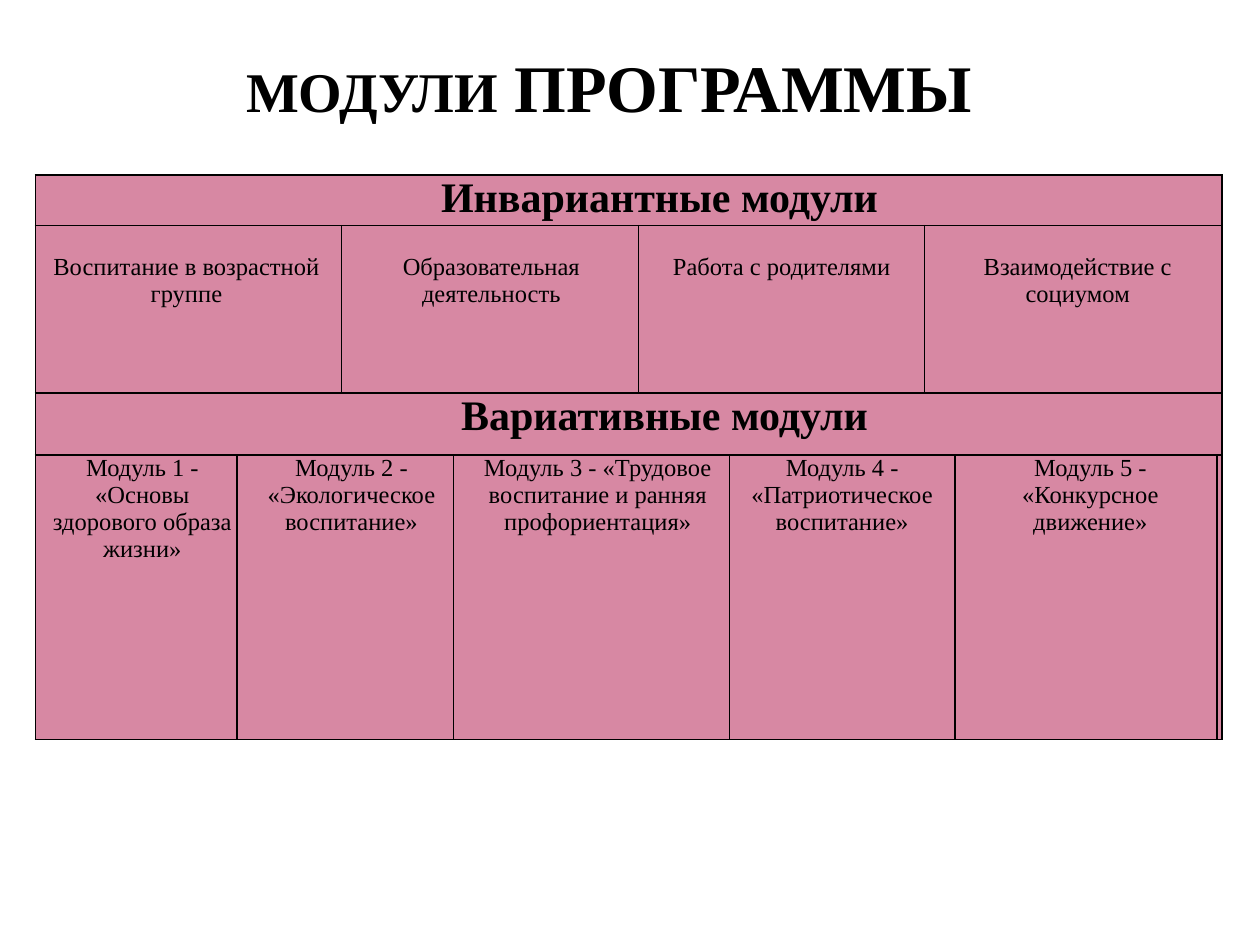
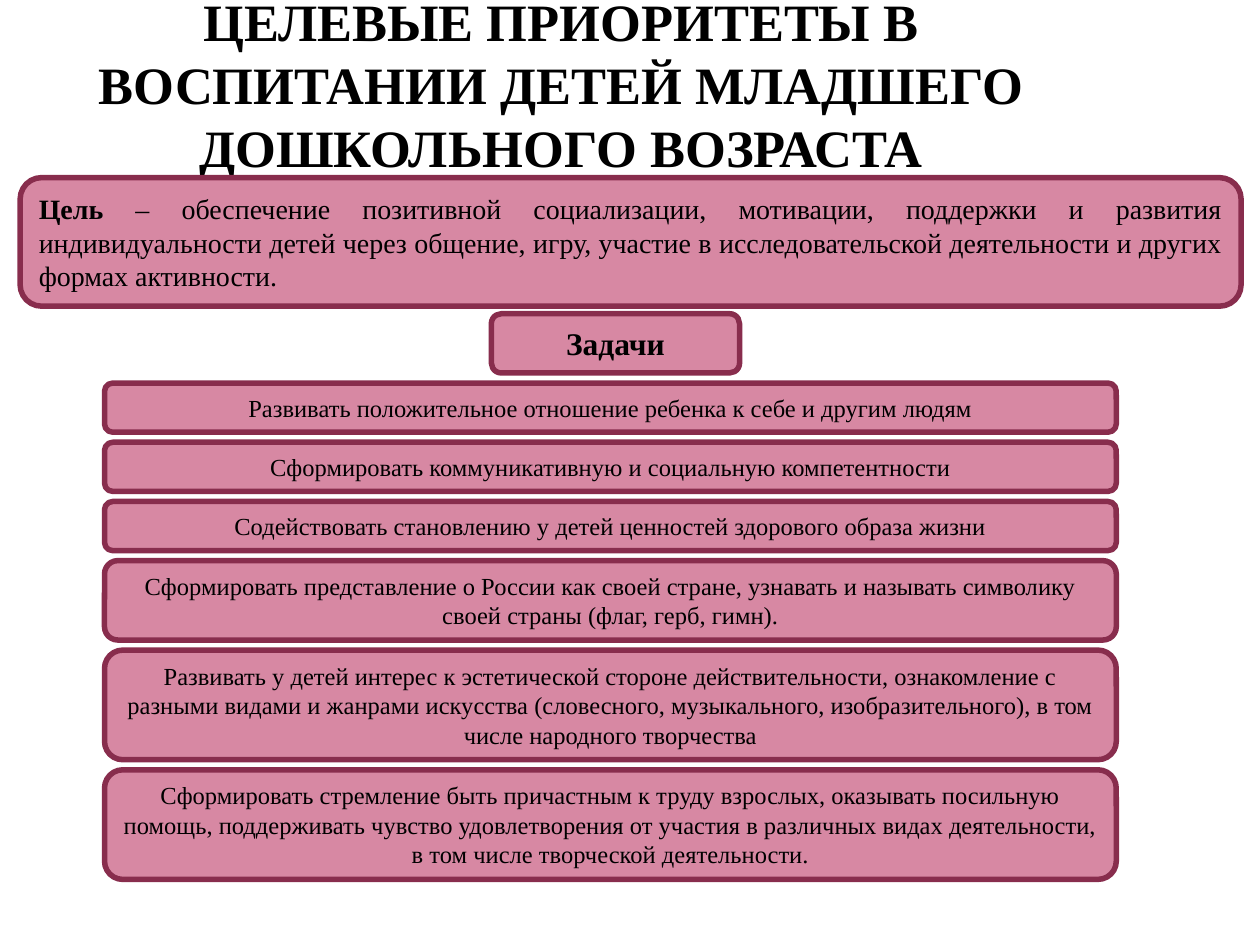
import pptx
import pptx.dml.color
import pptx.enum.shapes
import pptx.enum.text
import pptx.oxml
import pptx.util
from pptx.oxml.ns import nsdecls

Inches = pptx.util.Inches
Pt = pptx.util.Pt
Align = pptx.enum.text.PP_ALIGN
Anchor = pptx.enum.text.MSO_ANCHOR

PINK = pptx.dml.color.RGBColor(0xD7, 0x88, 0xA3)
WINE = pptx.dml.color.RGBColor(0x88, 0x2D, 0x4D)
BLACK = pptx.dml.color.RGBColor(0, 0, 0)
FACE = "Times New Roman"

deck = pptx.Presentation()
deck.slide_width, deck.slide_height = Inches(10), Inches(7.5)


def write(frame, runs, size, bold=False, align=Align.CENTER):
    """Fill a frame with one paragraph; runs are (text, changes) pairs."""
    frame.word_wrap = True
    para = frame.paragraphs[0]
    para.alignment = align
    font = para.font
    font.name, font.size, font.bold = FACE, Pt(size), bold
    font.color.rgb = BLACK
    for text, changes in runs:
        run = para.add_run()
        run.text = text
        for key, value in changes.items():
            setattr(run.font, key, value)


def start(left, top, width, height, runs, size):
    """Add a slide with its title."""
    slide = deck.slides.add_slide(deck.slide_layouts[6])
    box = slide.shapes.add_textbox(*map(Inches, (left, top, width, height)))
    frame = box.text_frame
    frame.margin_left = frame.margin_right = Inches(0.05)
    frame.margin_top = frame.margin_bottom = 0
    frame.vertical_anchor = Anchor.BOTTOM
    write(frame, runs, size, bold=True)
    return slide


# Slide 1: modules of the programme
slide = start(0.75, 0.29, 8.17, 0.71,
              [("МОДУЛИ", {}), (" ПРОГРАММЫ", {"size": Pt(38)})], 32)
widths = [1.6, 0.83, 0.89, 1.47, 0.72, 1.55, 0.24, 2.08, 0.03]
heights = [0.36, 1.33, 0.49, 2.26]
table = slide.shapes.add_table(
    len(heights), len(widths), Inches(0.28), Inches(1.39),
    Inches(sum(widths)), Inches(sum(heights))).table
table.first_row = table.horz_banding = False
for col, width in zip(table.columns, widths):
    col.width = Inches(width)
for row, height in zip(table.rows, heights):
    row.height = Inches(height)

# Each row: size, bold, top margin, first-line indent, then the cells as
# (text, columns spanned, left indent, right indent)
rows = [
    (24, True, 0, 0.49, [("Инвариантные модули", 9, 0, 0)]),
    (14, False, 0.22, 0, [
        ("Воспитание в возрастной группе", 2, 0.1, 0.13),
        ("Образовательная деятельность", 2, 0.1, 0.08),
        ("Работа с родителями", 2, 0.07, 0.07),
        ("Взаимодействие с социумом", 3, 0.07, 0)]),
    (24, True, 0, 0.49, [("Вариативные модули", 9, 0.08, 0)]),
    (14, False, 0, 0, [
        ("Модуль 1 - «Основы здорового образа жизни»", 1, 0.1, 0),
        ("Модуль 2 - «Экологическое воспитание»", 2, 0.1, 0),
        ("Модуль 3 - «Трудовое воспитание и ранняя профориентация»",
         2, 0.1, 0),
        ("Модуль 4 - «Патриотическое воспитание»", 2, 0, 0),
        ("Модуль 5 - «Конкурсное движение»", 1, 0.07, 0),
        ("", 1, 0, 0)]),
]
for y, (size, bold, top, first, items) in enumerate(rows):
    x = 0
    for text, span, left, right in items:
        cell = table.cell(y, x)
        if span > 1:
            cell.merge(table.cell(y, x + span - 1))
        if text:
            write(cell.text_frame, [(text, {})], size, bold)
            props = cell.text_frame.paragraphs[0]._p.get_or_add_pPr()
            for key, value in (("marL", left), ("marR", right),
                               ("indent", first)):
                props.set(key, str(Inches(value)))
        x += span
    for x in range(len(widths)):
        cell = table.cell(y, x)
        cell.margin_left = cell.margin_right = cell.margin_bottom = 0
        cell.margin_top = Inches(top)
        props = cell._tc.get_or_add_tcPr()
        for side in ("lnL", "lnR", "lnT", "lnB"):
            props.append(pptx.oxml.parse_xml(
                f'<a:{side} {nsdecls("a")} w="{Pt(1)}"><a:solidFill>'
                f'<a:srgbClr val="{BLACK}"/></a:solidFill></a:{side}>'))
        cell.fill.solid()
        cell.fill.fore_color.rgb = PINK

# Slide 2: goal and tasks
slide = start(0, 0, 8.91, 1.41, [(
    "ЦЕЛЕВЫЕ ПРИОРИТЕТЫ В ВОСПИТАНИИ ДЕТЕЙ МЛАДШЕГО ДОШКОЛЬНОГО ВОЗРАСТА",
    {})], 30)
goal = [
    ("Цель", {"bold": True}),
    (" – обеспечение позитивной социализации, мотивации, поддержки и развития "
     "индивидуальности детей через общение, игру, участие в исследовательской "
     "деятельности и других формах активности.", {}),
]
# Each task: lines it takes, text
tasks = [
    (1, "Развивать положительное отношение ребенка к себе и другим людям"),
    (1, "Сформировать коммуникативную и социальную компетентности"),
    (1, "Содействовать становлению у детей ценностей здорового образа жизни"),
    (2, "Сформировать представление о России как своей стране, узнавать и "
        "называть символику своей страны (флаг, герб, гимн)."),
    (3, "Развивать у детей интерес к эстетической стороне действительности, "
        "ознакомление с разными видами и жанрами искусства (словесного, "
        "музыкального, изобразительного), в том числе народного творчества"),
    (3, "Сформировать стремление быть причастным к труду взрослых, оказывать "
        "посильную помощь, поддерживать чувство удовлетворения от участия в "
        "различных видах деятельности, в том числе творческой деятельности."),
]
cards = [
    ((0.16, 1.41, 9.69, 1.02), goal, 16, False, Align.JUSTIFY),
    ((3.9, 2.49, 1.97, 0.47), [("Задачи", {})], 18, True, Align.CENTER),
]
top = 3.04
for lines, text in tasks:
    height = 0.15 + 0.24 * lines
    cards.append(((0.83, top, 8.03, height), [(text, {})], 14, False,
                  Align.CENTER))
    top += height + 0.08

for place, runs, size, bold, align in cards:
    card = slide.shapes.add_shape(
        pptx.enum.shapes.MSO_SHAPE.ROUNDED_RECTANGLE, *map(Inches, place))
    card.shadow.inherit = False
    card.fill.solid()
    card.fill.fore_color.rgb = PINK
    card.line.color.rgb = WINE
    card.line.width = Pt(3.15)
    card.text_frame.vertical_anchor = Anchor.MIDDLE
    write(card.text_frame, runs, size, bold, align)

deck.save("out.pptx")
